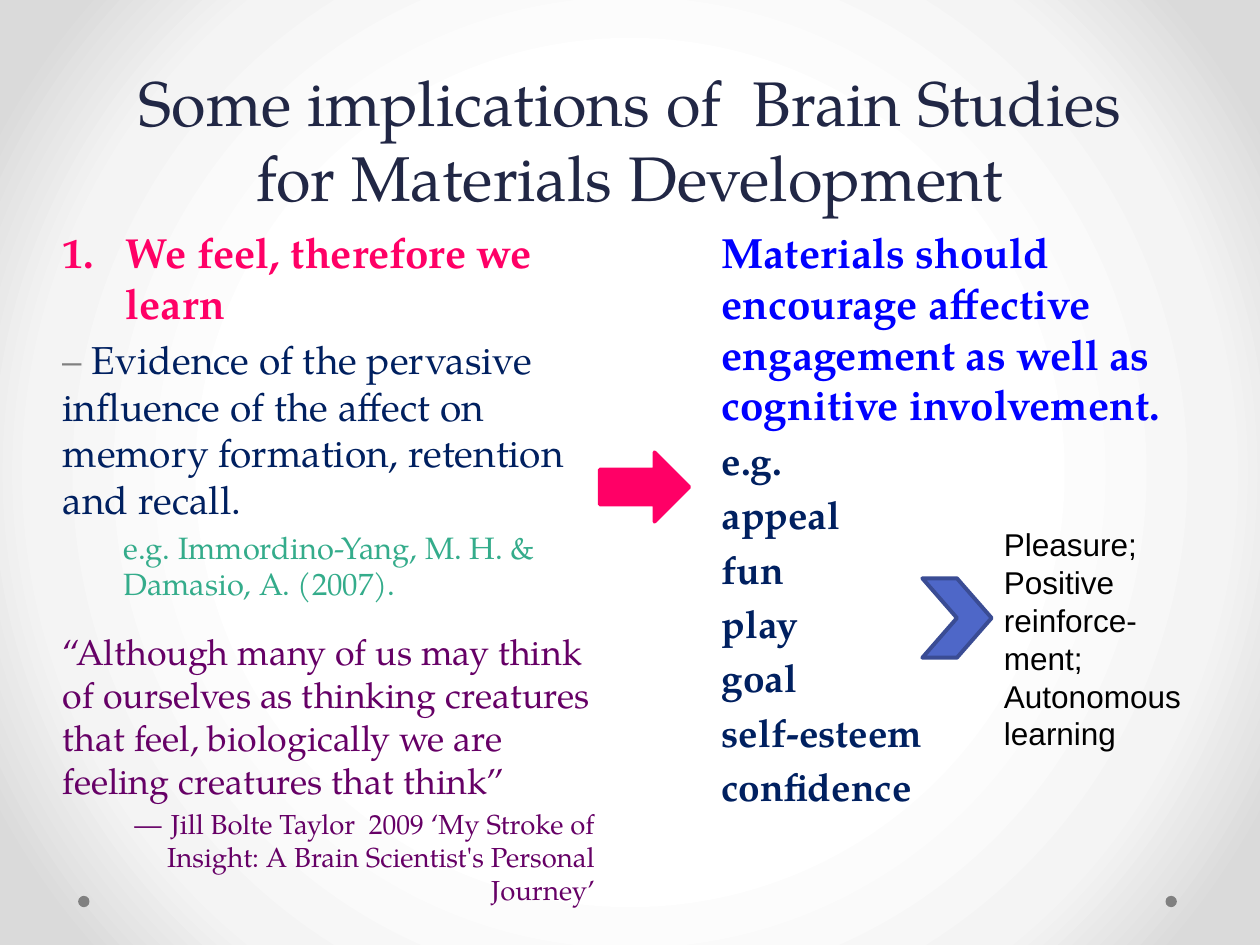
"""Build a slide on what brain studies imply for materials development."""
from pptx import Presentation, oxml, util as u
from pptx.dml.color import RGBColor
from pptx.enum import shapes, text
from pptx.oxml import ns

HUES = dict(title="212745", pink="FF0066", blue="0000FF", navy="002060",
            grey="808080", green="34AC8B", plum="660066", black="000000",
            chev="4E67C8", edge="3A4C94")
SERIF, SANS = "TeX Gyre Pagella", "Arial"
GLOW = [(50, "FFFFFF"), (76, "F4F4F4"), (92, "DADADA")]

TITLE = [dict(runs=[("Some implications of  Brain Studies\vfor Materials Development", "title")],
              size=36, align="CENTER")]
LEFT = [
    dict(runs=[("We feel, therefore we learn", "pink")], size=24.1, bold=True, num=True),
    dict(runs=[("– ", "grey"),
               ("Evidence of the pervasive influence of the affect on memory "
                "formation, retention and recall.", "navy")], size=22.2, gap=4.4),
    dict(runs=[("e.g. Immordino-Yang, M. H. & Damasio, A. (2007).", "green")],
         size=17.6, gap=3.5, left=0.48),
    dict(runs=[("“Although many of us may think of ourselves as thinking creatures "
                "that feel, biologically we are feeling creatures that think”", "plum")],
         size=20.4, gap=15.8),
    dict(runs=[("― Jill Bolte Taylor  2009 ‘My Stroke of Insight: "
                "A Brain Scientist's Personal Journey’", "plum")],
         size=15.7, gap=3.1, align="RIGHT"),
]
WORDS = ["e.g.", "appeal", "fun", "play", "goal", "self-esteem", "confidence"]
RIGHT = [dict(runs=[("Materials should encourage affective engagement as well as "
                     "cognitive involvement.", "blue")], size=24.1, bold=True)]
RIGHT += [dict(runs=[(word, "navy")], size=22.2, bold=True, gap=4.4) for word in WORDS]
GAINS = [dict(runs=[(gain, "black")], size=18, font=SANS) for gain in
         ["Pleasure;", "Positive reinforce-ment;", "Autonomous learning"]]

BOXES = [
    ((0.5, 0, 9, 1.75), TITLE, "BOTTOM"),
    ((5.63, 1.75, 3.87, 4.95), RIGHT, "TOP"),
    ((0.4, 1.75, 4.42, 4.95), LEFT, "TOP"),
    ((7.87, 4.12, 1.77, 1.92), GAINS, "TOP"),
]
DOTS = [("OVAL", (x, 7.11, 0.09, 0.09), "grey", None) for x in (9.25, 0.62)]
MARKS = [
    ("RIGHT_ARROW", (4.76, 3.59, 0.71, 0.55), "pink", "pink"),
    ("CHEVRON", (7.32, 4.59, 0.55, 0.63), "chev", "edge"),
]


def tint(name):
    return RGBColor.from_string(HUES[name])


def place(at):
    return [u.Inches(n) for n in at]


def write(para, runs, size, font=SERIF, bold=False, align="LEFT", gap=0, left=0, num=False):
    para.alignment = getattr(text.PP_ALIGN, align)
    para.space_before = u.Pt(gap)
    props = para._p.get_or_add_pPr()
    if num:
        props.set("marL", str(u.Inches(0.5)))
        props.set("indent", str(-u.Inches(0.5)))
        bullet = oxml.parse_xml(f'<a:buAutoNum {ns.nsdecls("a")} type="arabicPeriod"/>')
        props.append(bullet)
    elif left:
        props.set("marL", str(u.Inches(left)))
    for words, hue in runs:
        if "\v" in words:
            head, tail = words.split("\v")
            parts = [head, tail]
        else:
            parts = [words]
        for i, part in enumerate(parts):
            if i:
                para.add_line_break()
            run = para.add_run()
            run.text = part
            run.font.size, run.font.name = u.Pt(size), font
            run.font.bold = bold
            run.font.color.rgb = tint(hue)


def add_box(slide, at, paras, anchor):
    frame = slide.shapes.add_textbox(*place(at)).text_frame
    frame.word_wrap = True
    frame.vertical_anchor = getattr(text.MSO_ANCHOR, anchor)
    for i, para in enumerate(paras):
        write(frame.add_paragraph() if i else frame.paragraphs[0], **para)


def add_mark(slide, kind, at, fill, edge):
    mark = slide.shapes.add_shape(getattr(shapes.MSO_SHAPE, kind), *place(at))
    mark.shadow.inherit = False
    mark.fill.solid()
    mark.fill.fore_color.rgb = tint(fill)
    if edge:
        mark.line.color.rgb = tint(edge)
        mark.line.width = u.Pt(2.25)
    else:
        mark.line.fill.background()


def add_glow(slide):
    slide.background.fill.gradient()
    old = slide.element.find(".//" + ns.qn("a:gradFill"))
    stops = "".join(f'<a:gs pos="{pos * 1000}"><a:srgbClr val="{hue}"/></a:gs>'
                    for pos, hue in GLOW)
    new = oxml.parse_xml(
        f'<a:gradFill {ns.nsdecls("a")} rotWithShape="1"><a:gsLst>{stops}</a:gsLst>'
        '<a:path path="circle"><a:fillToRect l="50000" t="50000" r="50000" b="50000"/>'
        '</a:path></a:gradFill>')
    old.getparent().replace(old, new)


def main():
    deck = Presentation()
    deck.slide_width, deck.slide_height = u.Inches(10), u.Inches(7.5)
    slide = deck.slides.add_slide(deck.slide_layouts[6])
    add_glow(slide)
    for mark in DOTS:
        add_mark(slide, *mark)
    for box in BOXES[:3]:
        add_box(slide, *box)
    for mark in MARKS:
        add_mark(slide, *mark)
    add_box(slide, *BOXES[3])
    deck.save("out.pptx")


if __name__ == "__main__":
    main()
